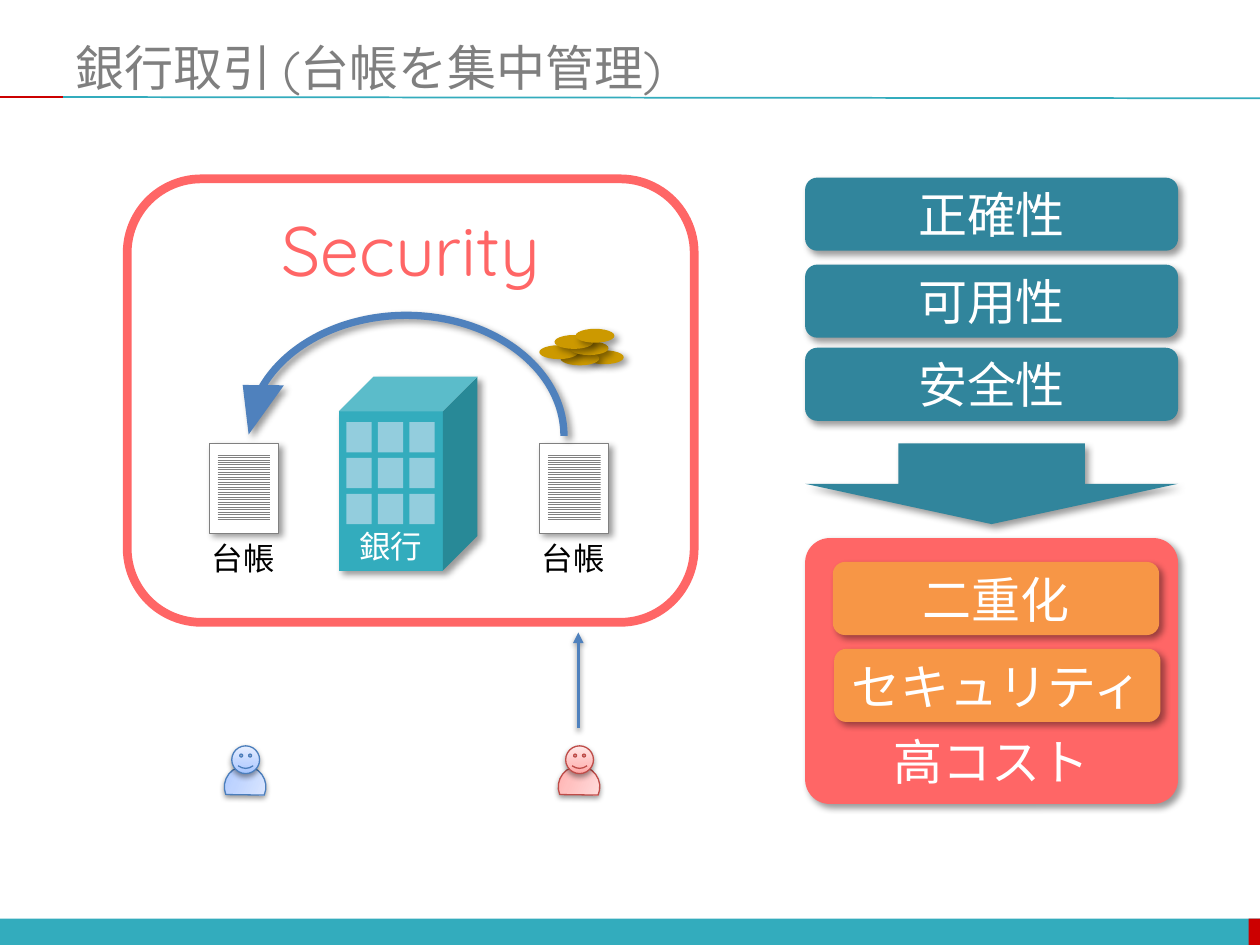
from itertools import product
from typing import NamedTuple

from lxml import etree
from pptx import Presentation
from pptx.dml.color import RGBColor
from pptx.enum.dml import MSO_PATTERN
from pptx.enum.shapes import MSO_CONNECTOR, MSO_SHAPE
from pptx.enum.text import MSO_ANCHOR, MSO_AUTO_SIZE, PP_ALIGN
from pptx.oxml import parse_xml
from pptx.oxml.ns import nsdecls, qn
from pptx.util import Inches, Pt

RECTANGLE, ROUNDED = MSO_SHAPE.RECTANGLE, MSO_SHAPE.ROUNDED_RECTANGLE
OVAL, CUBE, PAGE = MSO_SHAPE.OVAL, MSO_SHAPE.CUBE, MSO_SHAPE.FLOWCHART_PROCESS
CHORD, SMILEY = MSO_SHAPE.CHORD, MSO_SHAPE.SMILEY_FACE
FRAME = MSO_SHAPE.FLOWCHART_ALTERNATE_PROCESS
DOWN_ARROW, CIRCULAR_ARROW = MSO_SHAPE.DOWN_ARROW, MSO_SHAPE.CIRCULAR_ARROW
STRAIGHT = MSO_CONNECTOR.STRAIGHT
TOP, MIDDLE, BOTTOM = MSO_ANCHOR.TOP, MSO_ANCHOR.MIDDLE, MSO_ANCHOR.BOTTOM
LEFT, CENTER = PP_ALIGN.LEFT, PP_ALIGN.CENTER
LIGHT_HORIZONTAL = MSO_PATTERN.LIGHT_HORIZONTAL
NO_AUTO_SIZE, GROW = MSO_AUTO_SIZE.NONE, MSO_AUTO_SIZE.SHAPE_TO_FIT_TEXT

FONT = "Quicksand"
TURQUOISE, TEAL, CORAL, ORANGE = "33ACBD", "31859C", "FF6666", "F79646"
RED, BLUE, GRAY, WHITE = "CC0000", "4F81BD", "808080", "FFFFFF"
DEEP_SHADOW = (40, 4, 3, 45)
SOFT_SHADOW = (38, 3.1, 1.6, 90)


class Box(NamedTuple):
    left: float
    top: float
    width: float
    height: float

    def inner(self, left, top, width, height):
        return Box(self.left + self.width * left / 100,
                   self.top + self.height * top / 100,
                   self.width * width / 100, self.height * height / 100)

    def emu(self):
        return [Inches(length) for length in self]


PAGE_BOX = Box(0, 0, 10, 7.5)


def color(hex_string):
    return RGBColor.from_string(hex_string)


def add_shadow(shape, shadow):
    properties = shape._element.spPr
    effects = properties.find(qn("a:effectLst"))
    if effects is None:
        effects = etree.SubElement(properties, qn("a:effectLst"))
    if shadow:
        alpha, blur, distance, angle = shadow
        effects.append(parse_xml(
            f'<a:outerShdw {nsdecls("a")} blurRad="{Pt(blur)}" dist="{Pt(distance)}" '
            f'dir="{angle * 60000}" algn="tl" rotWithShape="0"><a:srgbClr val="000000">'
            f'<a:alpha val="{alpha * 1000}"/></a:srgbClr></a:outerShdw>'))


def add_figure(shapes, kind, box, fill=None, line=None, width=1, shadow=None):
    shape = shapes.add_shape(kind, *box.emu())
    shape.shadow.inherit = False
    add_shadow(shape, shadow)
    if fill:
        shape.fill.solid()
        shape.fill.fore_color.rgb = color(fill)
    else:
        shape.fill.background()
    if line:
        shape.line.color.rgb = color(line)
        shape.line.width = Pt(width)
    else:
        shape.line.fill.background()
    return shape


def write(shape, text, size, text_color, anchor=MIDDLE, alignment=CENTER):
    frame = shape.text_frame
    frame.text = text
    frame.vertical_anchor = anchor
    paragraph = frame.paragraphs[0]
    paragraph.alignment = alignment
    font = paragraph.runs[0].font
    font.name, font.size = FONT, Pt(size)
    font.color.rgb = color(text_color)


def add_line(shapes, start, end, line, width, shadow=None):
    connector = shapes.add_connector(STRAIGHT, *[Inches(length) for length in start + end])
    connector.line.color.rgb = color(line)
    connector.line.width = Pt(width)
    add_shadow(connector, shadow)
    return connector


def add_header(slide, box):
    title = slide.shapes.title
    title.left, title.top, title.width, title.height = box.inner(5, 4, 95, 6.13).emu()
    write(title, "銀行取引 (台帳を集中管理)", 28, "7F7F7F", alignment=LEFT)
    title.text_frame.auto_size = NO_AUTO_SIZE
    edge = box.height * 0.1027
    bend = box.width * 0.05
    add_line(slide.shapes, (bend, edge), (box.width, edge + 0.01), TURQUOISE, 1)
    add_line(slide.shapes, (0, edge), (bend, edge), RED, 1)


def add_footer(shapes, box):
    add_figure(shapes, RECTANGLE, box, TURQUOISE)
    add_figure(shapes, RECTANGLE, box.inner(99.1, 0, 0.9, 100), RED)


def add_ledger(shapes, box):
    group = shapes.add_group_shape().shapes
    add_figure(group, PAGE, box, WHITE, GRAY, 0.25, DEEP_SHADOW)
    writing = add_figure(group, PAGE, box.inner(12.5, 12.5, 76, 75))
    writing.fill.patterned()
    writing.fill.pattern = LIGHT_HORIZONTAL
    writing.fill.fore_color.rgb = color(GRAY)
    writing.fill.back_color.rgb = color(WHITE)
    caption = shapes.add_textbox(*box.inner(-14, 100, 129, 56).emu())
    write(caption, "台帳", 18, "000000", TOP, LEFT)
    caption.text_frame.word_wrap = False
    caption.text_frame.auto_size = GROW


def add_bank(shapes, box):
    group = shapes.add_group_shape().shapes
    building = add_figure(group, CUBE, box, TURQUOISE, shadow=DEEP_SHADOW)
    write(building, "銀行", 18, WHITE, BOTTOM)
    for row, column in product(range(3), repeat=2):
        window = box.inner(5.45 + 22.73 * column, 23.4 + 18.5 * row, 18.18, 15.58)
        add_figure(group, RECTANGLE, window, "93CDDD")


def add_coins(shapes, box):
    group = shapes.add_group_shape().shapes
    for left, top in ((54, 59), (25, 62), (0, 45), (36, 34), (18, 17), (43, 0)):
        add_figure(group, OVAL, box.inner(left, top, 46, 38), "CC9900", shadow=DEEP_SHADOW)


def add_person(shapes, box, tints, outline):
    stops = "".join(f'<a:gs pos="{position}"><a:srgbClr val="{tint}"/></a:gs>'
                    for position, tint in zip((0, 35000, 100000), tints))
    group = shapes.add_group_shape().shapes
    body = add_figure(group, CHORD, box.inner(0, 32.65, 100, 67.35),
                      None, outline, 0.75, SOFT_SHADOW)
    body.rotation = 113.3
    head = add_figure(group, SMILEY, box.inner(18, 0, 67, 45),
                      None, outline, 0.75, SOFT_SHADOW)
    for shape in (body, head):
        properties = shape._element.spPr
        properties.replace(properties.find(qn("a:noFill")), parse_xml(
            f'<a:gradFill {nsdecls("a")} rotWithShape="1"><a:gsLst>{stops}</a:gsLst>'
            '<a:lin ang="16200000" scaled="0"/></a:gradFill>'))


def add_security_zone(shapes, box):
    frame = add_figure(shapes, FRAME, box, None, CORAL, 5)
    write(frame, "Security", 40, CORAL, TOP)
    add_bank(shapes, box.inner(37.33, 44.6, 24.44, 43.75))
    add_coins(shapes, box.inner(72.67, 33.81, 14.89, 8.24))
    for left in (14.44, 72.67):
        add_ledger(shapes, box.inner(left, 59.66, 12.22, 20.17))
    transfer = add_figure(shapes, CIRCULAR_ARROW, box.inner(17.78, 26.14, 62.89, 63.64),
                          BLUE, shadow=DEEP_SHADOW)
    for index, value in enumerate((0.026, 11.423, 204.28, 108, 0.073)):
        transfer.adjustments[index] = value
    transfer._element.spPr.find(qn("a:xfrm")).set("flipH", "1")


def add_customers(shapes, box):
    add_person(shapes, box.inner(0, 65.22, 11.07, 35.5),
               ("A4C4FF", "BFD4FF", "E6EEFF"), "4B7EBC")
    add_person(shapes, box.inner(88.93, 65.22, 11.07, 35.5),
               ("FFA6A5", "FFC0BF", "FFE7E7"), "BF4C48")
    center = box.left + box.width * 0.943
    request = add_line(shapes, (center, box.top + box.height * 0.55),
                       (center, box.top), BLUE, 2, SOFT_SHADOW)
    outline = request._element.spPr.find(qn("a:ln"))
    etree.SubElement(outline, qn("a:tailEnd"), type="triangle")


def add_label(shapes, box, text, fill):
    label = add_figure(shapes, ROUNDED, box, fill, shadow=DEEP_SHADOW)
    write(label, text, 28, WHITE)
    return label


def add_requirements(shapes, box):
    for top, text in ((0, "正確性"), (13.88, "可用性"), (27.16, "安全性")):
        add_label(shapes, box.inner(0, top, 100, 11.67), text, TEAL)
    add_figure(shapes, DOWN_ARROW, box.inner(0, 42.45, 100, 12.88), TEAL, shadow=DEEP_SHADOW)
    cost_box = box.inner(0, 57.55, 100, 42.45)
    cost = add_label(shapes, cost_box, "高コスト", CORAL)
    cost.adjustments[0] = 0.092
    cost.text_frame.vertical_anchor = BOTTOM
    for left, top, text in ((7.43, 9, "二重化"), (7.77, 41.7, "セキュリティ")):
        add_label(shapes, cost_box.inner(left, top, 87.5, 27.5), text, ORANGE)


def main():
    presentation = Presentation()
    presentation.slide_width = Inches(PAGE_BOX.width)
    presentation.slide_height = Inches(PAGE_BOX.height)
    slide = presentation.slides.add_slide(presentation.slide_layouts[5])
    add_footer(slide.shapes, PAGE_BOX.inner(0, 97.2, 100, 2.8))
    add_header(slide, PAGE_BOX)
    add_security_zone(slide.shapes, PAGE_BOX.inner(10.1, 18.93, 45, 46.93))
    add_customers(slide.shapes, PAGE_BOX.inner(17.8, 66.93, 29.8, 18.4))
    add_requirements(slide.shapes, PAGE_BOX.inner(63.9, 18.8, 29.6, 66.27))
    presentation.save("out.pptx")


if __name__ == "__main__":
    main()
